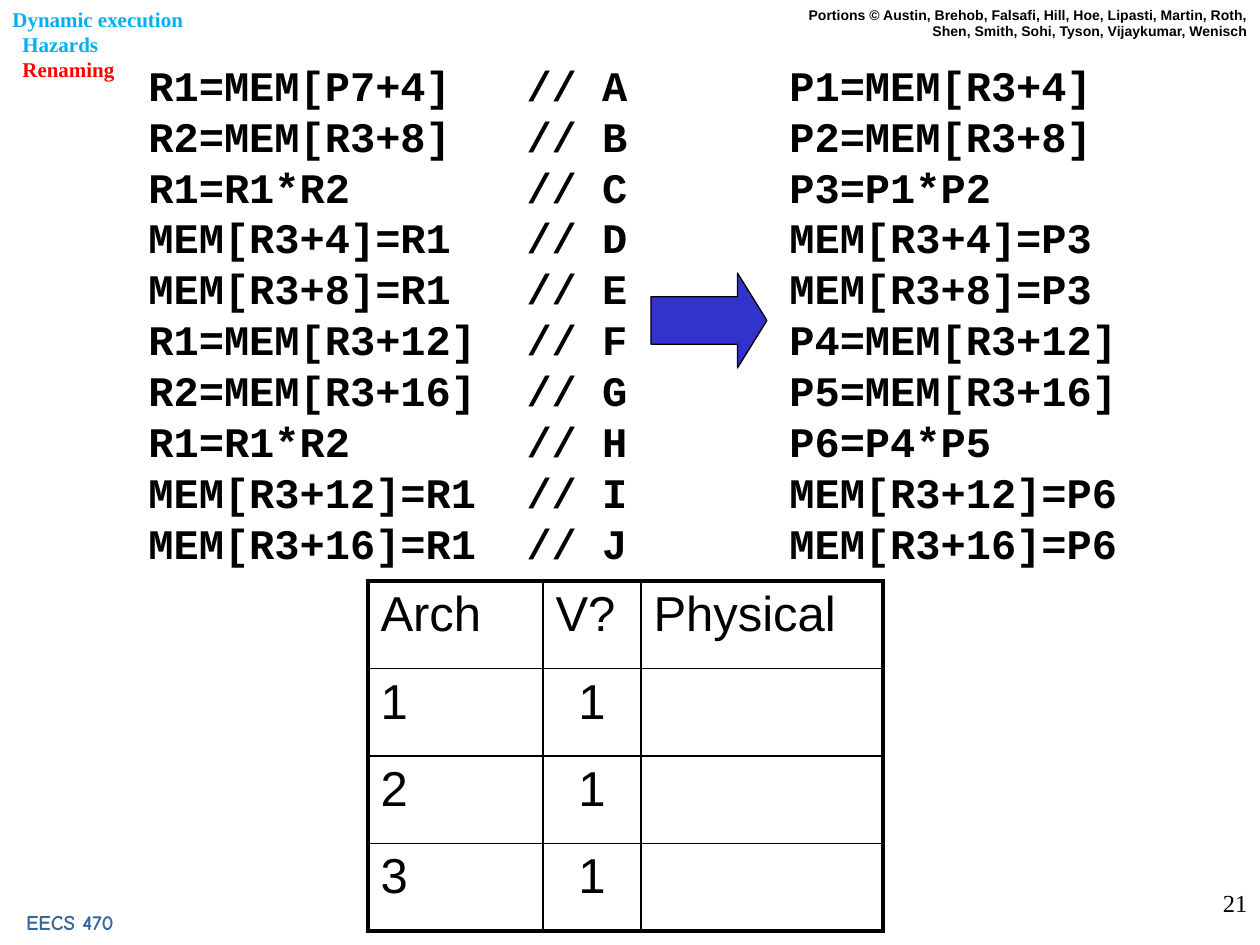
from dataclasses import dataclass

from lxml.etree import SubElement
from pptx import Presentation
from pptx.dml.color import RGBColor
from pptx.enum.shapes import MSO_SHAPE as Shape
from pptx.enum.text import MSO_AUTO_SIZE as AutoSize, PP_ALIGN as Align
from pptx.oxml.ns import qn
from pptx.util import Emu, Pt

# Content
CODE = [  # architectural form, tag, renamed form
    ("R1=MEM[P7+4]", "A", "P1=MEM[R3+4]"),
    ("R2=MEM[R3+8]", "B", "P2=MEM[R3+8]"),
    ("R1=R1*R2", "C", "P3=P1*P2"),
    ("MEM[R3+4]=R1", "D", "MEM[R3+4]=P3"),
    ("MEM[R3+8]=R1", "E", "MEM[R3+8]=P3"),
    ("R1=MEM[R3+12]", "F", "P4=MEM[R3+12]"),
    ("R2=MEM[R3+16]", "G", "P5=MEM[R3+16]"),
    ("R1=R1*R2", "H", "P6=P4*P5"),
    ("MEM[R3+12]=R1", "I", "MEM[R3+12]=P6"),
    ("MEM[R3+16]=R1", "J", "MEM[R3+16]=P6"),
]
COMMENT_COLUMN = 15
RENAME_TABLE = [
    ("Arch", "V?", "Physical"),
    ("1", "1", ""),
    ("2", "1", ""),
    ("3", "1", ""),
]
TABLE_COLUMNS = (175, 98, 242)
OUTLINE = ["Dynamic execution", "Hazards", "Renaming"]
CURRENT_TOPIC = "Renaming"
CREDIT = ("Portions © Austin, Brehob, Falsafi, Hill, Hoe, Lipasti, Martin, "
          "Roth, Shen, Smith, Sohi, Tyson, Vijaykumar, Wenisch")
COURSE = "EECS 470"
PAGE = "21"


@dataclass(frozen=True)
class Style:
    font: str
    size: int
    color: str = "000000"
    bold: bool = False


class Theme:
    code = Style("Courier New", 24, bold=True)
    table = Style("Arial", 28)
    outline = Style("Times New Roman", 12, "00B0F0", True)
    current = Style("Times New Roman", 12, "FF0000", True)
    credit = Style("Arial", 8, bold=True)
    course = Style("Comic Neue", 12, "336699", True)
    page = Style("Times New Roman", 14)
    arrow = "3333CC"
    line = "000000"
    outer, inner, arrow_line = 2.25, 1, 0.75


def px(n):
    return Emu(n * 914400 // 126)


def rgb(color):
    return RGBColor.from_string(color)


def format_paragraph(p, style, align=Align.LEFT):
    p.alignment = align
    for r in p.runs:
        r.font.name, r.font.size = style.font, Pt(style.size)
        r.font.bold, r.font.color.rgb = style.bold, rgb(style.color)


def add_text(s, box, text, style, align=Align.LEFT, wrap=True):
    tf = s.shapes.add_textbox(*map(px, box)).text_frame
    tf.word_wrap, tf.auto_size = wrap, AutoSize.NONE
    tf.text = text
    for p in tf.paragraphs:
        format_paragraph(p, style, align)
    return tf


def add_code(s, box, lines):
    tf = add_text(s, box, "\n".join(lines), Theme.code)
    for p in tf.paragraphs:
        p.line_spacing, p.space_before = 0.8, Pt(6)
        props = p._p.get_or_add_pPr()
        props.set("marL", str(px(48)))
        props.set("indent", str(-px(48)))


def set_borders(cell, widths):
    props = cell._tc.get_or_add_tcPr()
    for i, (side, width) in enumerate(widths.items()):
        ln = props.makeelement(qn(f"a:ln{side}"), {"w": str(Pt(width))})
        fill = SubElement(ln, qn("a:solidFill"))
        SubElement(fill, qn("a:srgbClr"), val=Theme.line)
        props.insert(i, ln)


def add_rename_table(s, left, top, height):
    n_rows, n_cols = len(RENAME_TABLE), len(TABLE_COLUMNS)
    table = s.shapes.add_table(n_rows, n_cols, px(left), px(top),
                               px(sum(TABLE_COLUMNS)), px(height)).table
    for column, width in zip(table.columns, TABLE_COLUMNS):
        column.width = px(width)
    for i, row in enumerate(RENAME_TABLE):
        for j, text in enumerate(row):
            cell = table.cell(i, j)
            cell.fill.background()
            cell.text = text
            centered = i > 0 and j == 1
            p = cell.text_frame.paragraphs[0]
            format_paragraph(p, Theme.table,
                             Align.CENTER if centered else Align.LEFT)
            p.font.size = Pt(Theme.table.size)
            edges = {"L": j == 0, "R": j == n_cols - 1,
                     "T": i == 0, "B": i == n_rows - 1}
            set_borders(cell, {side: Theme.outer if edge else Theme.inner
                               for side, edge in edges.items()})


def main():
    prs = Presentation()
    prs.slide_width, prs.slide_height = px(1260), px(945)
    s = prs.slides.add_slide(prs.slide_layouts[6])

    # Footer and credit
    add_text(s, (-12, 903, 164, 38), COURSE, Theme.course, Align.CENTER)
    add_text(s, (788, 0, 472, 47), CREDIT, Theme.credit, Align.RIGHT)
    add_text(s, (998, 882, 262, 63), PAGE, Theme.page, Align.RIGHT)

    # Code before and after renaming
    add_code(s, (136, 63, 514, 514),
             [f"{code:<{COMMENT_COLUMN}}// {tag}" for code, tag, _ in CODE])
    arrow = s.shapes.add_shape(Shape.RIGHT_ARROW,
                               px(651), px(273), px(116), px(95))
    arrow.adjustments[0], arrow.adjustments[1] = 0.5, 0.31
    arrow.shadow.inherit = False
    arrow.fill.solid()
    arrow.fill.fore_color.rgb = rgb(Theme.arrow)
    arrow.line.color.rgb = rgb(Theme.line)
    arrow.line.width = Pt(Theme.arrow_line)
    add_code(s, (777, 63, 514, 525), [renamed for _, _, renamed in CODE])

    # Rename table
    add_rename_table(s, 368, 581, 350)

    # Lecture outline
    tf = add_text(s, (0, 0, 198, 89), "\n".join(OUTLINE), Theme.outline,
                  wrap=False)
    for p in tf.paragraphs[1:]:
        p._p.get_or_add_pPr().set("marL", str(px(10)))
        if p.text == CURRENT_TOPIC:
            format_paragraph(p, Theme.current)

    prs.save("out.pptx")


if __name__ == "__main__":
    main()
